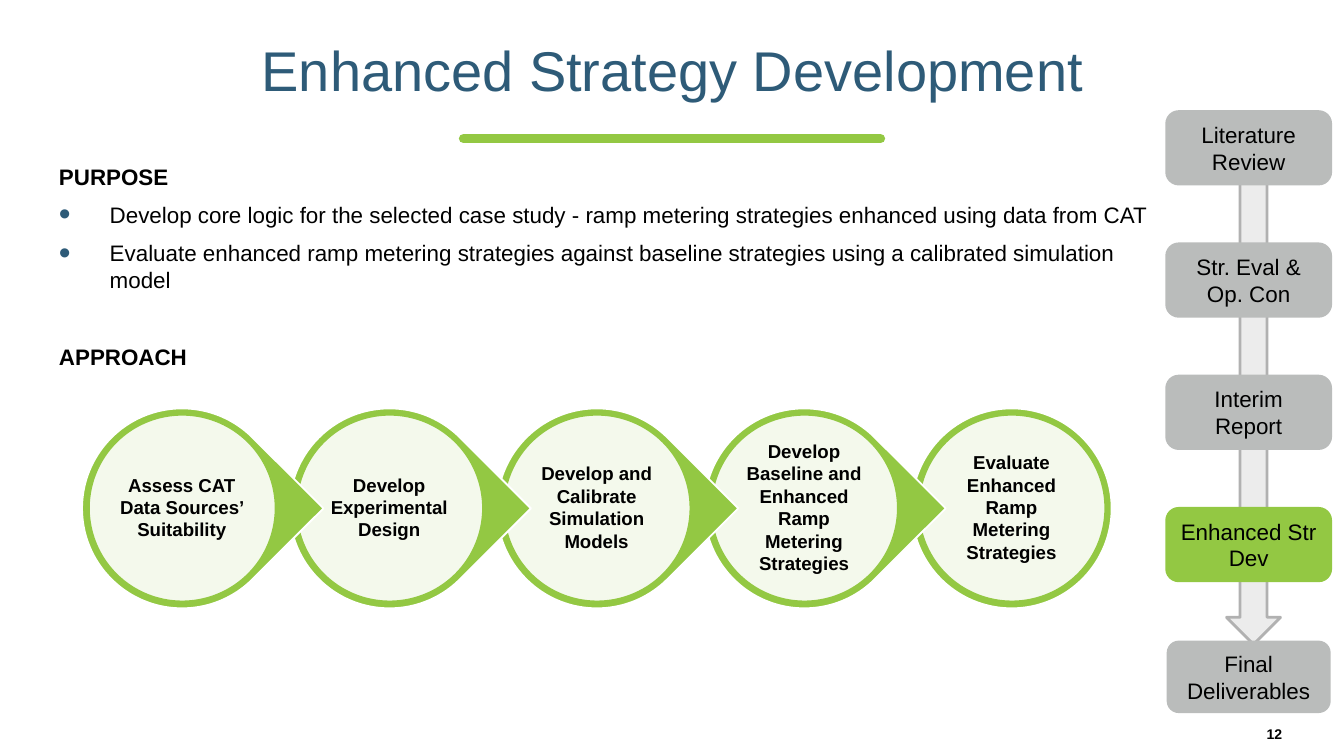
from lxml import etree
from pptx import Presentation
from pptx.dml.color import RGBColor
from pptx.enum.shapes import MSO_CONNECTOR, MSO_SHAPE
from pptx.enum.text import MSO_ANCHOR, MSO_AUTO_SIZE, PP_ALIGN
from pptx.oxml.ns import qn
from pptx.util import Cm, Pt

ELLIPSE, TEARDROP = MSO_SHAPE.OVAL, MSO_SHAPE.TEAR
ROUNDED, ARROW = MSO_SHAPE.ROUNDED_RECTANGLE, MSO_SHAPE.RIGHT_ARROW
LEFT, CENTER = PP_ALIGN.LEFT, PP_ALIGN.CENTER
MIDDLE = MSO_ANCHOR.MIDDLE


class Theme:
    font = "Arial"
    green = RGBColor.from_string("93C843")
    blue = RGBColor.from_string("2E5B78")
    black = RGBColor.from_string("000000")
    white = RGBColor.from_string("FFFFFF")
    gray = RGBColor.from_string("BABCBB")
    arrow_fill = RGBColor.from_string("ECECEC")
    arrow_line = RGBColor.from_string("B1B1B1")
    title, body, step, number = Pt(30), Pt(12), Pt(10), Pt(7.5)


def write(tf, text, size=Theme.body, color=Theme.black, bold=False,
          align=CENTER, before=0, after=0, spacing=1.0):
    """Fill the first empty paragraph, or add one, and return it."""
    p = tf.paragraphs[0] if not tf.text else tf.add_paragraph()
    p.alignment, p.line_spacing = align, spacing
    p.space_before, p.space_after = Pt(before), Pt(after)
    r = p.add_run()
    r.text = text
    r.font.name, r.font.size, r.font.bold = Theme.font, size, bold
    r.font.color.rgb = color
    return p


def add_shape(kind, x, y, w, h, fill, line=None, width=1):
    sp = s.shapes.add_shape(kind, Cm(x), Cm(y), Cm(w), Cm(h))
    sp.shadow.inherit = False
    sp.fill.solid()
    sp.fill.fore_color.rgb = fill
    if line is None:
        sp.line.fill.background()
    else:
        sp.line.color.rgb = line
        sp.line.width = Pt(width)
    return sp


prs = Presentation()
prs.slide_width, prs.slide_height = Cm(25.4), Cm(14.29)
s = prs.slides.add_slide(prs.slide_layouts[1])
title, body = s.placeholders

# Title and its rule
title.left, title.top, title.width, title.height = Cm(0.86), Cm(0.53), Cm(23.7), Cm(1.7)
tf = title.text_frame
tf.auto_size, tf.vertical_anchor = MSO_AUTO_SIZE.NONE, MIDDLE
write(tf, "Enhanced Strategy Development", Theme.title, Theme.blue, spacing=0.9)

rule = s.shapes.add_connector(MSO_CONNECTOR.STRAIGHT, Cm(8.76), Cm(2.62), Cm(16.64), Cm(2.62))
rule.line.color.rgb, rule.line.width = Theme.green, Pt(5)
rule.line._get_or_add_ln().set("cap", "rnd")
etree.SubElement(rule._element.spPr, qn("a:effectLst"))

# Purpose and approach
body.left, body.top, body.width, body.height = Cm(0.86), Cm(2.95), Cm(21.21), Cm(9.83)
tf = body.text_frame
tf.auto_size = MSO_AUTO_SIZE.NONE
for text, heading, before in (
    ("PURPOSE", True, 3),
    ("Develop core logic for the selected case study - ramp metering strategies "
     "enhanced using data from CAT", False, 3),
    ("Evaluate enhanced ramp metering strategies against baseline strategies "
     "using a calibrated simulation model", False, 3),
    ("APPROACH", True, 24),
):
    p = write(tf, text, bold=heading, align=LEFT, before=before, after=3)
    pPr = p._p.get_or_add_pPr()
    indent = 0 if heading else Cm(0.96)
    pPr.set("marL", str(indent))
    pPr.set("indent", str(-indent))
    if heading:
        etree.SubElement(pPr, qn("a:buNone"))
    else:
        color = etree.SubElement(pPr, qn("a:buClr"))
        etree.SubElement(color, qn("a:srgbClr"), val=str(Theme.blue))
        etree.SubElement(pPr, qn("a:buSzPct"), val="150000")
        etree.SubElement(pPr, qn("a:buFont"), typeface=Theme.font)
        etree.SubElement(pPr, qn("a:buChar"), char="•")

# Slide number
tf = s.shapes.add_textbox(Cm(22.61), Cm(13.59), Cm(2.95), Cm(0.58)).text_frame
tf.word_wrap = True
write(tf, "12", Theme.number, bold=True)

# Approach steps, drawn from last to first so each point overlaps the next circle
steps = [
    "Assess CAT Data Sources’ Suitability",
    "Develop Experimental Design",
    "Develop and Calibrate Simulation Models",
    "Develop Baseline and Enhanced Ramp Metering Strategies",
    "Evaluate Enhanced Ramp Metering Strategies",
]
last = len(steps) - 1
for i, text in reversed(list(enumerate(steps))):
    x, y = 1.55 + 3.92 * i, 7.72
    outer = add_shape(ELLIPSE if i == last else TEARDROP, x, y, 3.78, 3.78,
                      Theme.green, Theme.white)
    if i < last:
        outer.adjustments[0] = 1
        outer.rotation = 45
    inner = add_shape(ELLIPSE, x + 0.13, y + 0.12, 3.53, 3.53, Theme.white, Theme.green)
    fill = inner._element.spPr.find(qn("a:solidFill"))
    etree.SubElement(fill[0], qn("a:alpha"), val="90000")
    tf = s.shapes.add_textbox(Cm(x + 0.63), Cm(y + 0.61), Cm(2.51), Cm(2.51)).text_frame
    tf.word_wrap, tf.vertical_anchor = True, MIDDLE
    tf.margin_left = tf.margin_right = tf.margin_top = tf.margin_bottom = Cm(0.03)
    write(tf, text, Theme.step, bold=True)

# Project progress
arrow = add_shape(ARROW, 18.75, 6.73, 9.88, 1.02, Theme.arrow_fill, Theme.arrow_line, 1.5)
arrow.rotation = 90
stages = ["Literature Review", "Str. Eval & Op. Con", "Interim Report",
          "Enhanced Str Dev", "Final Deliverables"]
current = "Enhanced Str Dev"
for i, text in enumerate(stages):
    color = Theme.green if text == current else Theme.gray
    line = None if text == stages[-1] else color
    box = add_shape(ROUNDED, 22.05, 2.11 + 2.5 * i, 3.1, 1.37, color, line, 1.5)
    tf = box.text_frame
    tf.word_wrap, tf.vertical_anchor = True, MIDDLE
    tf.margin_left = tf.margin_right = Cm(0.18)
    tf.margin_top = tf.margin_bottom = Cm(0.1)
    write(tf, text)

prs.save("out.pptx")
